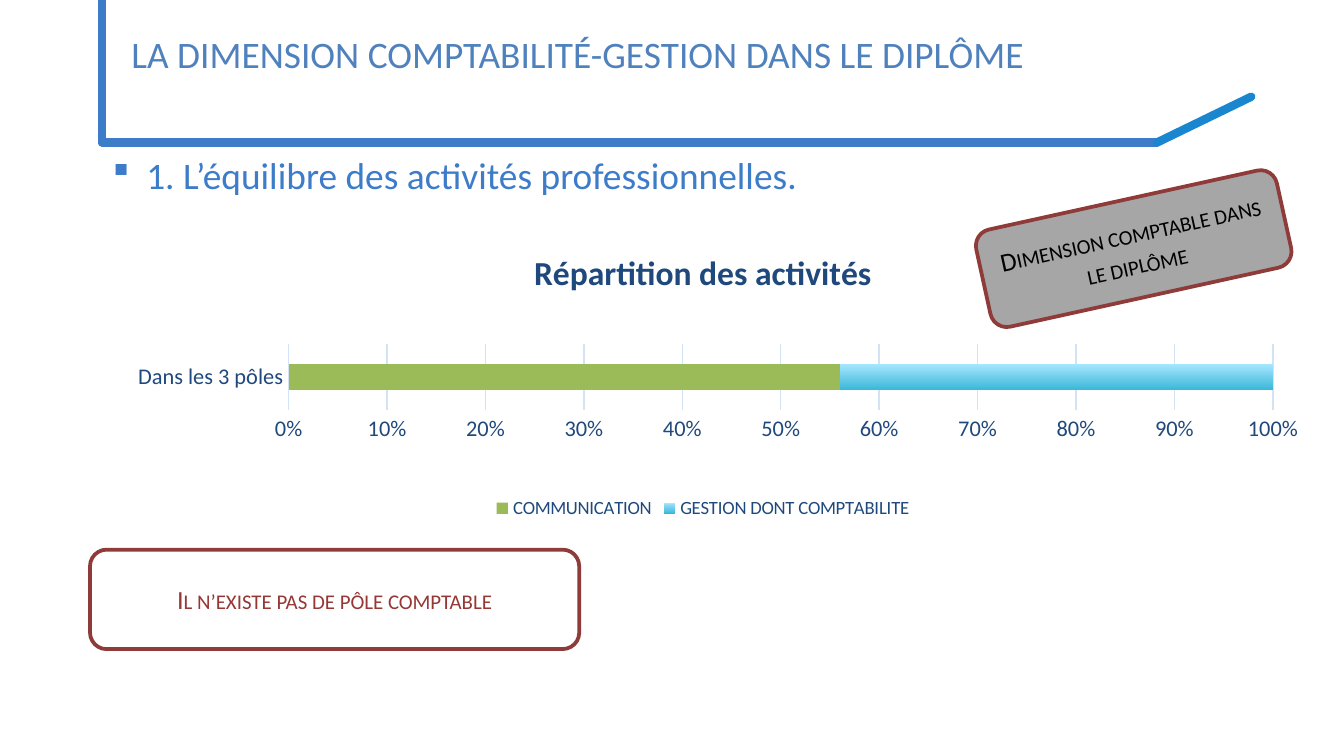
"""Build the slide on the accounting and management dimension of the diploma."""
from dataclasses import dataclass

from lxml import etree
from pptx import Presentation
from pptx import util as u
from pptx.chart.data import CategoryChartData
from pptx.dml.color import RGBColor
from pptx.enum import chart as ch, shapes, text
from pptx.oxml import parse_xml
from pptx.oxml.ns import nsdecls, qn


@dataclass(frozen=True)
class Theme:
    font: str = "Calibri"
    bullet_font: str = "Wingdings"
    title: str = "4F81BD"
    blue: str = "3D7CC9"
    bright: str = "1A86D0"
    navy: str = "1F497D"
    grid: str = "D4E3F4"
    green: str = "9BBB59"
    gradient: tuple = ("39B7D8", "A7E6FF")
    border: str = "8E3B39"
    red: str = "953735"
    grey: str = "A6A6A6"
    black: str = "000000"
    heading_size: int = 20
    chart_title_size: int = 18
    callout_size: int = 14
    axis_size: int = 12
    legend_size: int = 10


theme = Theme()


def style(font, size, color, bold=False):
    font.name, font.size, font.bold = theme.font, u.Pt(size), bold
    font.color.rgb = RGBColor.from_string(color)


def write(frame, words, size, color, anchor, align):
    frame.word_wrap, frame.vertical_anchor = True, anchor
    paragraph = frame.paragraphs[0]
    paragraph.text, paragraph.alignment = words, align
    style(paragraph.font, size, color)
    return paragraph


deck = Presentation()
deck.slide_width = u.Inches(10)
deck.slide_height = deck.slide_width * 9 // 16
slide = deck.slides.add_slide(deck.slide_layouts[6])

for start, end, color in (
    ((0.76, 1.06), (8.61, 1.06), theme.blue),
    ((8.61, 1.06), (9.31, 0.72), theme.bright),
    ((0.76, 1.06), (0.76, 0), theme.blue),
):
    rule = slide.shapes.add_connector(
        shapes.MSO_CONNECTOR.STRAIGHT, *map(u.Inches, start + end))
    rule.line.width = u.Pt(4.5)
    rule.line.color.rgb = RGBColor.from_string(color)
    properties = rule._element.spPr
    properties.find(qn("a:ln")).set("cap", "rnd")
    etree.SubElement(properties, qn("a:effectLst"))

title = slide.shapes.add_textbox(*map(u.Inches, (0.88, 0, 8.74, 0.79)))
write(title.text_frame, "LA DIMENSION COMPTABILITÉ-GESTION DANS LE DIPLÔME",
      theme.heading_size, theme.title, text.MSO_ANCHOR.MIDDLE, text.PP_ALIGN.LEFT)

body = slide.shapes.add_textbox(*map(u.Inches, (0.74, 1.08, 9.12, 4.27)))
point = write(body.text_frame, "1. L’équilibre des activités professionnelles.",
              theme.heading_size, theme.blue, text.MSO_ANCHOR.TOP, text.PP_ALIGN.LEFT)
point.space_before = u.Pt(4)
indents = point._p.get_or_add_pPr()
indents.set("marL", str(u.Inches(0.25)))
indents.set("indent", str(-u.Inches(0.25)))
for bullet in (f'buFont {nsdecls("a")} typeface="{theme.bullet_font}" charset="2"',
               f'buChar {nsdecls("a")} char="§"'):
    indents.find(qn("a:defRPr")).addprevious(parse_xml(f"<a:{bullet}/>"))

activities = CategoryChartData(number_format="0")
activities.categories = ["Dans les 3 pôles"]
activities.add_series("COMMUNICATION", [56])
activities.add_series("GESTION DONT COMPTABILITE", [44])
chart = slide.shapes.add_chart(
    ch.XL_CHART_TYPE.BAR_STACKED_100,
    *map(u.Inches, (0.67, 1.71, 9.12, 2.19)), activities).chart
style(chart.font, theme.legend_size, theme.black)

chart.has_title = True
chart.chart_title.include_in_layout = False
heading = chart.chart_title.text_frame.paragraphs[0]
heading.text = "Répartition des activités"
style(heading.font, theme.chart_title_size, theme.navy, bold=True)

chart.has_legend = True
chart.legend.position = ch.XL_LEGEND_POSITION.BOTTOM
chart.legend.include_in_layout = False
style(chart.legend.font, theme.legend_size, theme.navy)

poles, share = chart.category_axis, chart.value_axis
for axis in (poles, share):
    axis.major_tick_mark = axis.minor_tick_mark = ch.XL_TICK_MARK.NONE
    style(axis.tick_labels.font, theme.axis_size, theme.navy)
share.has_major_gridlines = True
share.minimum_scale, share.maximum_scale, share.major_unit = 0, 1, 0.1
share.tick_labels.number_format = "0%"
share.tick_labels.number_format_is_linked = False
share.format.line.fill.background()
for line in (poles.format.line, share.major_gridlines.format.line):
    line.width = u.Pt(0.75)
    line.color.rgb = RGBColor.from_string(theme.grid)

bars = chart.plots[0]
bars.gap_width, bars.overlap, bars.vary_by_categories = 150, 100, False
communication, management = bars.series
communication.format.fill.solid()
communication.format.fill.fore_color.rgb = RGBColor.from_string(theme.green)
shade = management.format.fill
shade.gradient()
shade.gradient_angle = 90
for stop, color in zip(shade.gradient_stops, theme.gradient):
    stop.color.rgb = RGBColor.from_string(color)

area = chart._chartSpace.chart.plotArea
for old in area.findall(qn("c:layout")):
    area.remove(old)
percentages = {"x": 16.2, "y": 38.9, "w": 80.3, "h": 22.4}
settings = {"layoutTarget": "inner", "xMode": "edge", "yMode": "edge"}
settings.update((side, percent / 100) for side, percent in percentages.items())
layout = etree.Element(qn("c:layout"))
manual = etree.SubElement(layout, qn("c:manualLayout"))
for name, value in settings.items():
    etree.SubElement(manual, qn(f"c:{name}")).set("val", str(value))
area.insert(0, layout)

for words, place, angle, fill, color in (
    ("Il n’existe pas de pôle comptable", (0.67, 4.09, 3.64, 0.74), 0, None, theme.red),
    ("Dimension comptable dans le diplôme", (7.29, 1.48, 2.29, 0.74), 347.6,
     theme.grey, theme.black),
):
    callout = slide.shapes.add_shape(
        shapes.MSO_SHAPE.ROUNDED_RECTANGLE, *map(u.Inches, place))
    callout.shadow.inherit = False
    callout.rotation = angle
    if fill:
        callout.fill.solid()
        callout.fill.fore_color.rgb = RGBColor.from_string(fill)
    else:
        callout.fill.background()
    callout.line.width = u.Pt(2)
    callout.line.color.rgb = RGBColor.from_string(theme.border)
    message = write(callout.text_frame, words, theme.callout_size, color,
                    text.MSO_ANCHOR.MIDDLE, text.PP_ALIGN.CENTER)
    message._p.pPr.find(qn("a:defRPr")).set("cap", "small")

deck.save("out.pptx")
